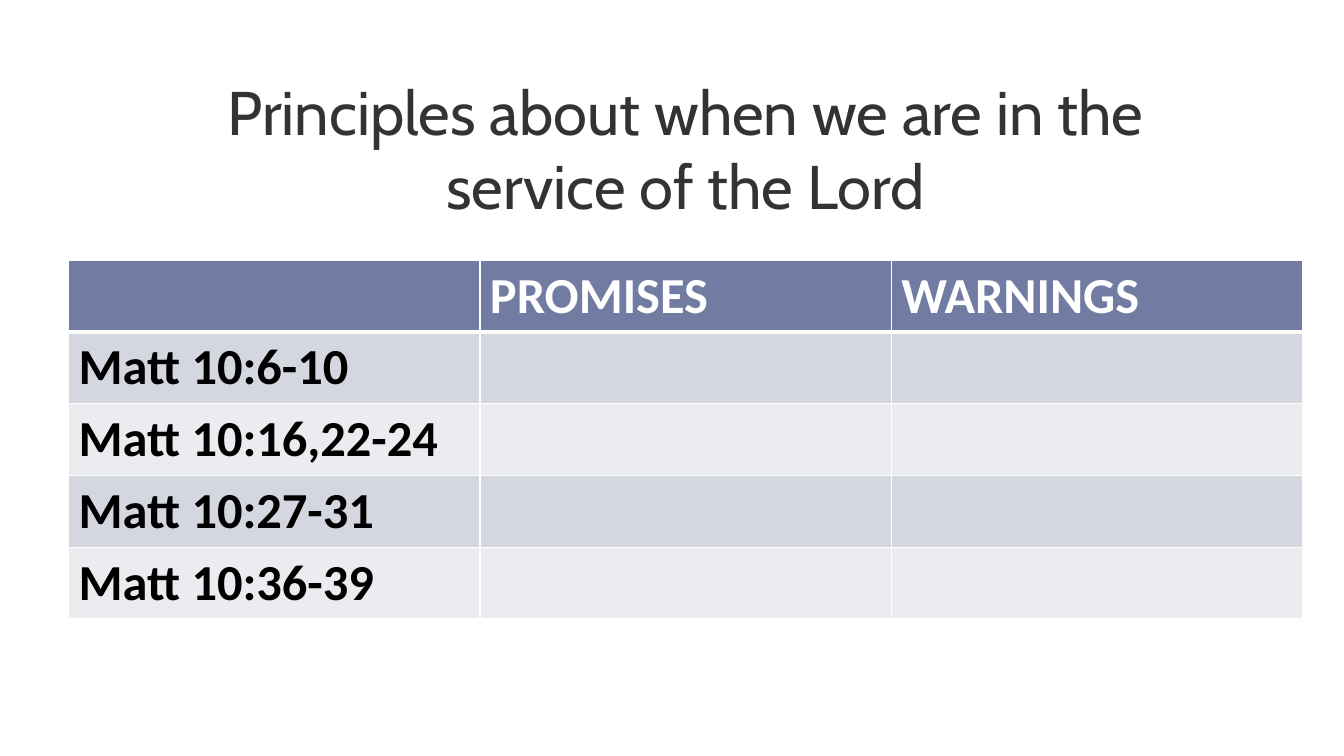
from dataclasses import dataclass

from lxml import etree
from pptx import Presentation
from pptx.dml.color import RGBColor
from pptx.enum.text import MSO_ANCHOR, MSO_AUTO_SIZE, PP_ALIGN
from pptx.oxml.ns import qn
from pptx.util import Inches, Pt

CENTER, LEFT = PP_ALIGN.CENTER, PP_ALIGN.LEFT
MIDDLE = MSO_ANCHOR.MIDDLE
NO_AUTOFIT = MSO_AUTO_SIZE.NONE
TITLE_ONLY = 5


@dataclass(frozen=True)
class Theme:
    title_font: str = "Cabin"
    table_font: str = "Calibri"
    title_size: int = 44
    table_size: int = 36
    title_color: str = "333333"
    header_text: str = "FFFFFF"
    body_text: str = "000000"
    header_fill: str = "727CA3"
    band_fills: tuple[str, str] = ("D5D7E0", "EBECF0")
    border: str = "FFFFFF"
    thin: int = 1
    thick: int = 3


@dataclass(frozen=True)
class TableRow:
    texts: tuple[str, str, str]
    fill: str
    color: str
    top: int
    bottom: int


THEME = Theme()
HEADER = ("", "PROMISES", "WARNINGS")
PASSAGES = ("Matt 10:6-10", "Matt 10:16,22-24", "Matt 10:27-31", "Matt 10:36-39")
COLUMN_WIDTH = 4.08
ROW_HEIGHT = 0.7


def write(tf, text: str, *, font: str, size: int, color: str,
          bold: bool = False, align=LEFT) -> None:
    p = tf.paragraphs[0]
    p.alignment = align
    r = p.add_run()
    r.text = text
    r.font.name = font
    r.font.size = Pt(size)
    r.font.bold = bold
    r.font.color.rgb = RGBColor.from_string(color)


def set_borders(cell, top: int, bottom: int) -> None:
    tc_pr = cell._tc.get_or_add_tcPr()
    widths = {"lnL": THEME.thin, "lnR": THEME.thin, "lnT": top, "lnB": bottom}
    for position, (side, width) in enumerate(widths.items()):
        line = etree.Element(qn(f"a:{side}"), w=str(Pt(width)))
        fill = etree.SubElement(line, qn("a:solidFill"))
        etree.SubElement(fill, qn("a:srgbClr"), val=THEME.border)
        tc_pr.insert(position, line)


def add_title(s, text: str) -> None:
    title = s.shapes.title
    title.left, title.top = Inches(1.94), Inches(0.68)
    title.width, title.height = Inches(9.72), Inches(1.58)
    tf = title.text_frame
    tf.word_wrap = True
    tf.auto_size = NO_AUTOFIT
    tf.vertical_anchor = MIDDLE
    write(tf, text, font=THEME.title_font, size=THEME.title_size,
          color=THEME.title_color, align=CENTER)


def table_rows() -> list[TableRow]:
    rows = [TableRow(HEADER, THEME.header_fill, THEME.header_text,
                     THEME.thin, THEME.thick)]
    for i, passage in enumerate(PASSAGES):
        top = THEME.thin if i else THEME.thick
        rows.append(TableRow((passage, "", ""), THEME.band_fills[i % 2],
                             THEME.body_text, top, THEME.thin))
    return rows


def add_principles_table(s, rows: list[TableRow]) -> None:
    columns = len(HEADER)
    table = s.shapes.add_table(
        len(rows), columns, Inches(0.68), Inches(2.58),
        Inches(COLUMN_WIDTH * columns), Inches(ROW_HEIGHT * len(rows))).table
    for i, row in enumerate(rows):
        for j, text in enumerate(row.texts):
            cell = table.cell(i, j)
            cell.fill.solid()
            cell.fill.fore_color.rgb = RGBColor.from_string(row.fill)
            set_borders(cell, row.top, row.bottom)
            if text:
                write(cell.text_frame, text, font=THEME.table_font,
                      size=THEME.table_size, color=row.color, bold=True)


def main() -> None:
    prs = Presentation()
    prs.slide_width, prs.slide_height = Inches(13.33), Inches(7.5)
    s = prs.slides.add_slide(prs.slide_layouts[TITLE_ONLY])
    add_title(s, "Principles about when we are in the service of the Lord")
    add_principles_table(s, table_rows())
    prs.save("out.pptx")


if __name__ == "__main__":
    main()
